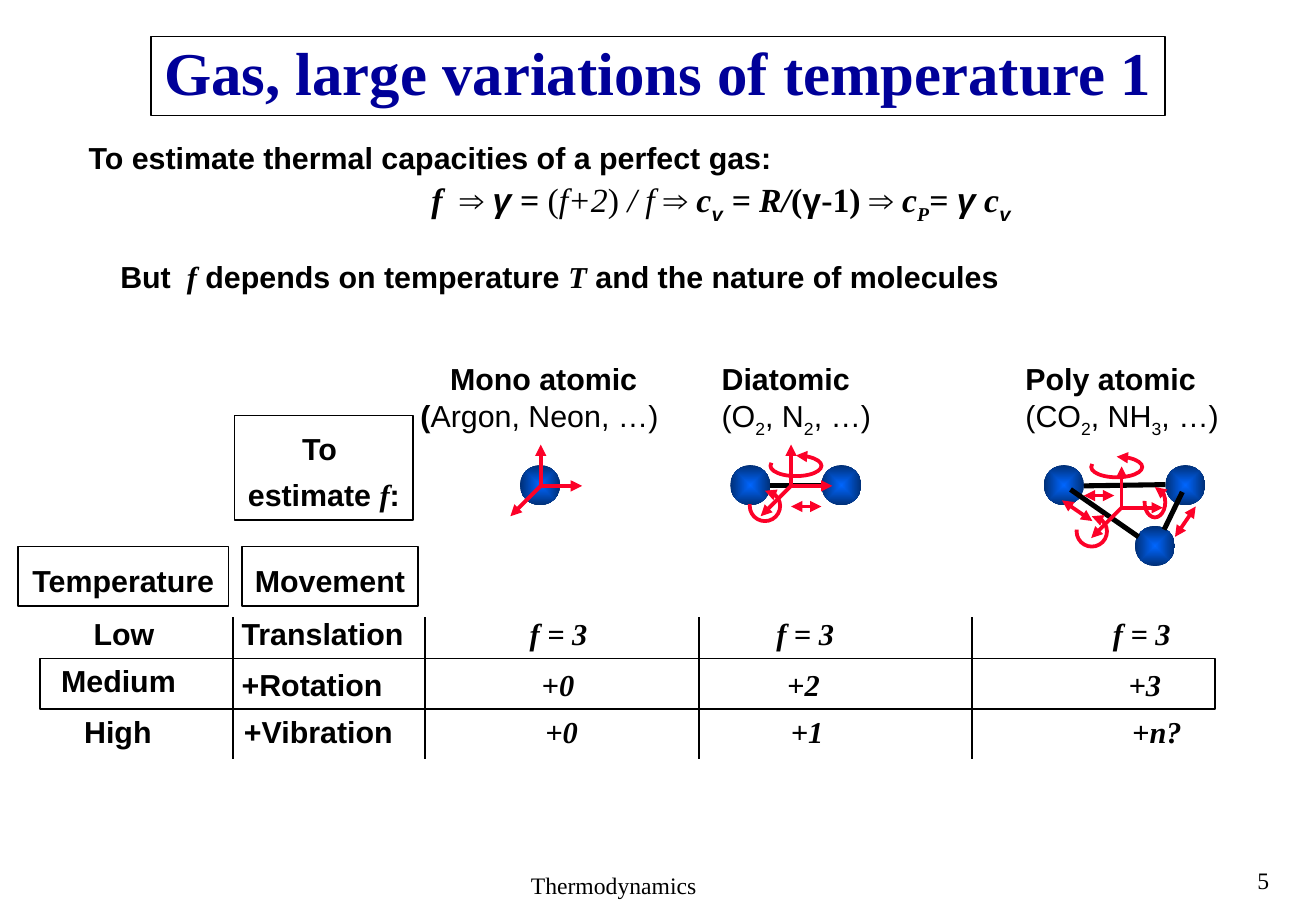
from lxml import etree
from pptx import Presentation
from pptx.dml import color
from pptx.enum import shapes, text
from pptx.oxml import ns, parse_xml
from pptx.util import Inches, Pt

BLACK, RED, NAVY = "000000", "FC0128", "000099"
LEFT, CENTER = text.PP_ALIGN.LEFT, text.PP_ALIGN.CENTER
FONTS = {"a": "Arial", "t": "Times New Roman", "c": "Courier New"}
ATOM = 0.33


def rgb(value):
    return color.RGBColor.from_string(value)


def add_runs(p, runs, size, ink):
    """Style letters: a/t/c font, b bold, i italic, _ subscript."""
    for words, style in runs:
        r = p.add_run()
        r.text = words
        r.font.name = FONTS[style[0]]
        r.font.size = Pt(size)
        r.font.bold = "b" in style
        r.font.italic = "i" in style
        r.font.color.rgb = rgb(ink)
        if "_" in style:
            r._r.get_or_add_rPr().set("baseline", "-25000")


def fill_text(sp, paragraphs, size=18, align=CENTER, spacing=None, ink=BLACK,
              anchor=text.MSO_ANCHOR.TOP, stops=()):
    tf = sp.text_frame
    tf.word_wrap = bool(stops)
    tf.vertical_anchor = anchor
    for i, runs in enumerate(paragraphs):
        p = tf.paragraphs[0] if i == 0 else tf.add_paragraph()
        p.alignment = align
        if spacing:
            p.line_spacing = spacing
        if stops:
            tabs = etree.SubElement(p._p.get_or_add_pPr(), ns.qn("a:tabLst"))
            for stop in stops:
                etree.SubElement(tabs, ns.qn("a:tab"), pos=str(Inches(stop)), algn="l")
        add_runs(p, runs, size, ink)


def add_text(s, x, y, w, h, paragraphs, **look):
    sp = s.shapes.add_textbox(Inches(x), Inches(y), Inches(w), Inches(h))
    fill_text(sp, paragraphs, **look)


def add_preset(s, kind, x, y, w, h):
    sp = s.shapes.add_shape(kind, Inches(x), Inches(y), Inches(w), Inches(h))
    sp.shadow.inherit = False
    sp.fill.background()
    return sp


def add_frame(s, x, y, w, h, paragraphs=(), **look):
    sp = add_preset(s, shapes.MSO_SHAPE.RECTANGLE, x, y, w, h)
    sp.line.color.rgb = rgb(BLACK)
    sp.line.width = Pt(1)
    fill_text(sp, paragraphs, **look)


def add_arrowheads(line, ends):
    for end in ends:
        etree.SubElement(line._get_or_add_ln(), ns.qn(f"a:{end}End"), type="triangle")


def add_line(s, x1, y1, x2, y2, ink=BLACK, width=1, ends=()):
    c = s.shapes.add_connector(shapes.MSO_CONNECTOR.STRAIGHT, Inches(x1), Inches(y1),
                               Inches(x2), Inches(y2))
    c.line.color.rgb = rgb(ink)
    c.line.width = Pt(width)
    add_arrowheads(c.line, ends)
    etree.SubElement(c._element.spPr, ns.qn("a:effectLst"))


def add_bond(s, *ends):
    add_line(s, *ends, width=3)


def add_vibration(s, *ends):
    add_line(s, *ends, ink=RED, width=2.25, ends=("head", "tail"))


def add_axes(s, x, y):
    for dx, dy in ((0.34, 0), (0, -0.34), (-0.25, 0.25)):
        add_line(s, x, y, x + dx, y + dy, RED, 2.25, ("tail",))


def add_atom(s, x, y):
    sp = add_preset(s, shapes.MSO_SHAPE.OVAL, x, y, ATOM, ATOM)
    sp.line.fill.background()
    sp.fill.gradient()
    old = sp._element.spPr.find(ns.qn("a:gradFill"))
    old.getparent().replace(old, parse_xml(
        f'<a:gradFill {ns.nsdecls("a")} rotWithShape="1"><a:gsLst>'
        '<a:gs pos="0"><a:srgbClr val="0066FF"/></a:gs>'
        '<a:gs pos="100000"><a:srgbClr val="002F76"/></a:gs></a:gsLst>'
        '<a:path path="shape"><a:fillToRect l="50000" t="50000" r="50000" b="50000"/>'
        '</a:path></a:gradFill>'))


def add_rotation(s, x, y, w, h):
    sp = add_preset(s, shapes.MSO_SHAPE.ARC, x, y, w, h)
    # Clockwise from 270 to 187 degrees, in units of 100000/60000 degree
    sp.adjustments[0] = 162.0
    sp.adjustments[1] = 112.2
    sp.line.color.rgb = rgb(RED)
    sp.line.width = Pt(2.25)
    add_arrowheads(sp.line, ("head",))


def add_heading(s):
    add_frame(s, 1.24, 0.3, 8.35, 0.65, [[("Gas, large variations of temperature 1", "tb")]],
              size=36, spacing=0.9, ink=NAVY, anchor=text.MSO_ANCHOR.MIDDLE)
    add_text(s, 1.02 - 0.4, 1.02, 5.84, 0.48,
             [[("To estimate thermal capacities of a perfect gas:", "ab")]], spacing=1.25)
    add_text(s, 3.39, 1.33, 5.09, 0.48, [[
        ("f ", "tbi"), (" ⇒ ", "tb"), ("γ", "abi"), (" = ", "tbi"), ("(", "t"), ("f+2", "ti"),
        (")", "t"), (" / f ", "ti"), ("⇒", "tb"), (" c", "tbi"), ("v", "cbi_"),
        (" = R/", "tbi"), ("(", "tb"), ("γ", "ab"), ("-1) ⇒ ", "tb"), ("c", "tbi"),
        ("P", "tbi_"), ("= ", "tbi"), ("γ", "abi"), (" c", "tbi"), ("v", "cbi_")]],
        size=20, spacing=1.25)
    add_text(s, 0.89, 2, 7.43, 0.48, [[
        ("But ", "ab"), (" f", "tbi"), (" depends on temperature ", "ab"), ("T", "tbi"),
        (" and the nature of molecules", "ab")]], spacing=1.25)


def add_molecules(s):
    # Column headings
    add_text(s, 3.36, 2.92, 2.23, 0.7, [[("Mono atomic", "ab")],
                                        [("(", "ab"), ("Argon, Neon, …) ", "a")]])
    for x, w, name, first, second, count in (
            (5.84, 1.45, "Diatomic", "(O", ", N", "2"),
            (8.34, 1.82, "Poly atomic", "(CO", ", NH", "3")):
        add_text(s, x, 2.92, w, 0.7, [[(name, "ab")], [
            (first, "a"), ("2", "a_"), (second, "a"), (count, "a_"), (", …)", "a")]],
            align=LEFT)
    # Mono atomic
    add_atom(s, 4.28, 3.83)
    add_axes(s, 4.45, 4)
    # Diatomic
    for x in (6.01, 6.76):
        add_atom(s, x, 3.83)
    add_bond(s, 6.34, 4, 6.76, 4)
    add_axes(s, 6.51, 4)
    add_rotation(s, 6.34, 3.75, 0.42, 0.17)
    add_rotation(s, 6.17, 4.04, 0.25, 0.25)
    add_vibration(s, 6.51, 4.17, 6.76, 4.17)
    # Poly atomic
    for x, y in ((8.59, 3.83), (9.59, 3.83), (9.34, 4.33)):
        add_atom(s, x, y)
    for bond in ((8.92, 4, 9.59, 3.99), (9.58, 4.36, 9.73, 4.05), (8.81, 4.03, 9.37, 4.42)):
        add_bond(s, *bond)
    add_axes(s, 9.23, 4.18)
    for ring in ((8.98, 3.76, 0.42, 0.17), (8.86, 4.25, 0.25, 0.25), (9.42, 4.01, 0.17, 0.25)):
        add_rotation(s, *ring)
    for stretch in ((8.92, 4.08, 9.17, 4.08), (9.67, 4.42, 9.84, 4.17),
                    (8.99, 4.29, 8.74, 4.12)):
        add_vibration(s, *stretch)


def add_freedom_grid(s):
    # Framed labels
    add_frame(s, 1.93, 3.42, 1.47, 0.86, [
        [("To ", "ab")], [("estimate ", "ab"), ("f", "tbi"), (":", "ab")]], spacing=1.25)
    add_frame(s, 0.15, 4.5, 1.73, 0.49, [[("Temperature", "ab")]], spacing=1.25)
    add_frame(s, 1.99, 4.5, 1.45, 0.49, [[("Movement", "ab")]], spacing=1.25)
    # Temperatures
    for x, y, w, level in ((0.67, 4.94, 0.7, "Low"), (0.4, 5.33, 1.22, "Medium "),
                           (0.59, 5.75, 0.83, "High ")):
        add_text(s, x, y, w, 0.48, [[(level, "ab")]], spacing=1.25)
    # Movements and degrees of freedom, one tab stop per molecule
    for x, y, movement, values, stops in (
            (1.89, 4.94, "Translation", ("f = 3", "f = 3", "f = 3"), (2.37, 4.4, 7.17)),
            (1.89, 5.36, "+Rotation", ("+0", "+2", "+3"), (2.47, 4.49, 7.3)),
            (1.91, 5.75, "+Vibration", ("+0", "+1", "+n?"), (2.48, 4.5, 7.31))):
        runs = [(movement, "ab")] + [("\t" + value, "tbi") for value in values]
        add_text(s, x, y, 8.1, 0.48, [runs], align=LEFT, spacing=1.25, stops=stops)
    # Rules
    add_frame(s, 0.33, 5.42, 9.67, 0.42)
    for x in (1.92, 3.5, 5.75, 8):
        add_line(s, x, 5.08, x, 6.25)


def main():
    prs = Presentation()
    prs.slide_width, prs.slide_height = Inches(10.83), Inches(7.5)
    s = prs.slides.add_slide(prs.slide_layouts[6])
    add_heading(s)
    add_molecules(s)
    add_freedom_grid(s)
    # Footer
    add_text(s, 4.27, 7.12, 1.58, 0.34, [[("Thermodynamics", "t")]], size=14, align=LEFT)
    add_text(s, 10.25, 7.08, 0.43, 0.33, [[("5", "t")]], size=14, align=LEFT)
    prs.save("out.pptx")


if __name__ == "__main__":
    main()
